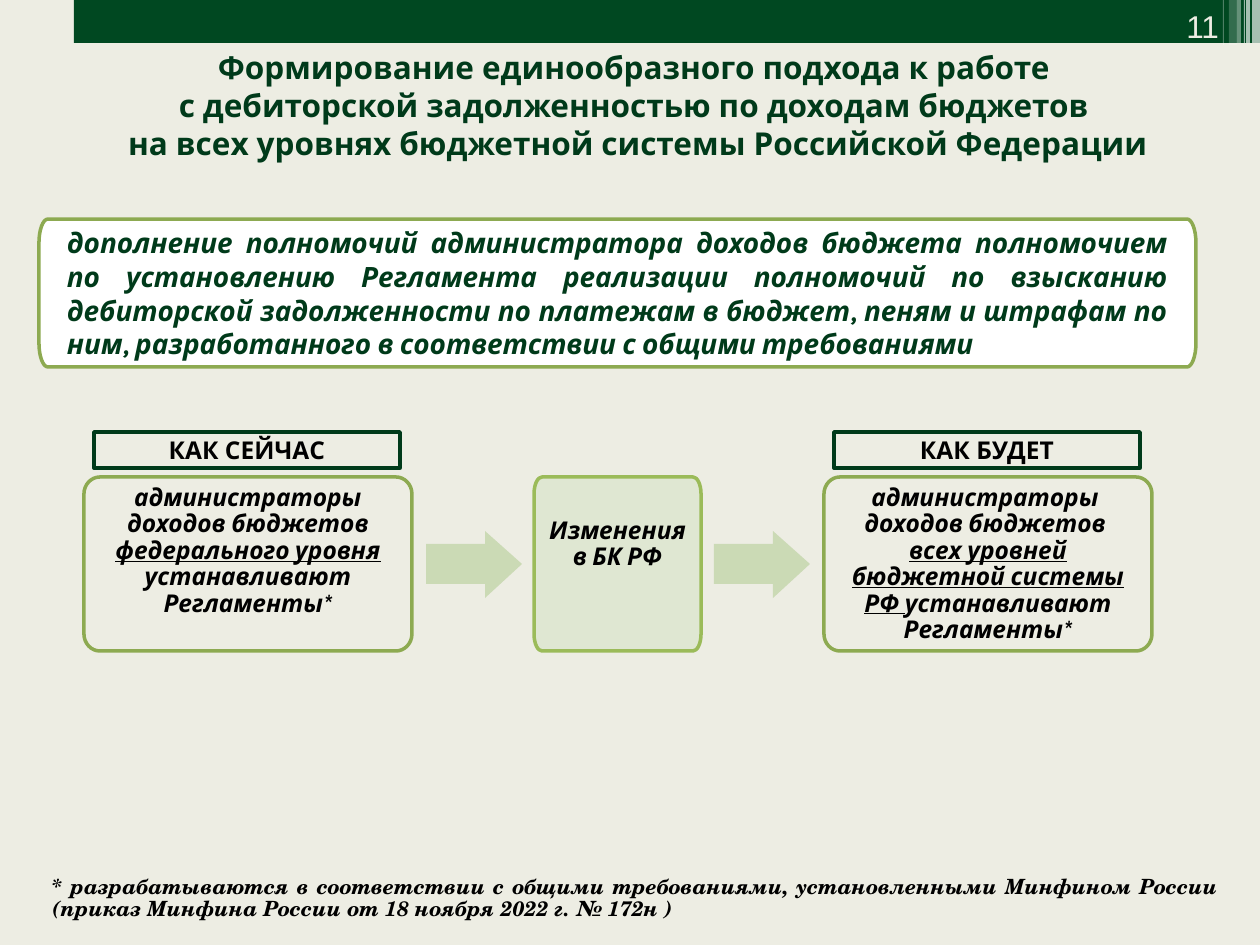
"""Build the slide on a uniform approach to budget receivables."""
from dataclasses import dataclass

from lxml.etree import SubElement
from pptx import Presentation
from pptx.dml.color import RGBColor
from pptx.enum.shapes import MSO_SHAPE as Shape
from pptx.enum.text import MSO_ANCHOR as Anchor, MSO_AUTO_SIZE as AutoSize, PP_ALIGN as Align
from pptx.oxml.ns import qn
from pptx.util import Emu, Pt

SCALE = 914400 / 126


@dataclass(frozen=True)
class Theme:
    paper: str = "EDEDE3"
    white: str = "FFFFFF"
    black: str = "000000"
    header: str = "004821"
    dark: str = "003A1A"
    olive: str = "8DAA51"
    lime: str = "9BBB59"
    mint: str = "DEE7D1"
    arrow: str = "CBDAB5"
    sans: str = "Karla"
    serif: str = "TeX Gyre Schola"
    number: str = "Arial"
    large: int = 18
    medium: int = 16
    body: int = 14
    note: int = 12


THEME = Theme()


def px(value):
    return Emu(round(value * SCALE))


def rgb(color):
    return RGBColor.from_string(color)


def style(shape, fill=None, line=None, opacity=100):
    shape.shadow.inherit = False
    if fill:
        shape.fill.solid()
        shape.fill.fore_color.rgb = rgb(fill)
        if opacity < 100:
            color = shape.fill._xPr.find(qn("a:solidFill"))[0]
            SubElement(color, qn("a:alpha"), val=str(opacity * 1000))
    else:
        shape.fill.background()
    if line:
        shape.line.color.rgb = rgb(line)
        shape.line.width = Pt(2)
    else:
        shape.line.fill.background()
    return shape


def add_rectangle(slide, box, **look):
    return style(slide.shapes.add_shape(Shape.RECTANGLE, *map(px, box)), **look)


def add_outline(slide, points, **look):
    start, *others = [(px(x), px(y)) for x, y in points]
    builder = slide.shapes.build_freeform(*start)
    builder.add_line_segments(others, close=True)
    return style(builder.convert_to_shape(), **look)


def round_corners(shape):
    """Turn every other segment of the outline into a quarter ellipse."""
    path = shape._element.find(".//" + qn("a:path"))
    segments = [segment for segment in path if len(segment)]
    ends = [(int(segment[0].get("x")), int(segment[0].get("y"))) for segment in segments]
    for index in range(1, len(ends), 2):
        first, last = ends[index - 1], ends[index]
        corner = (first[0], last[1]) if index % 4 == 1 else (last[0], first[1])
        segment = segments[index]
        curve = SubElement(path, qn("a:cubicBezTo"))
        for end in (first, last):
            x, y = (round(a + (c - a) * 0.55) for a, c in zip(end, corner))
            SubElement(curve, qn("a:pt"), x=str(x), y=str(y))
        curve.append(segment[0])
        path.replace(segment, curve)


def add_rounded_box(slide, box, radius, **look):
    left, top, width, height = box
    across, down = radius
    right, bottom = left + width, top + height
    points = [(left, top + down), (left + across, top), (right - across, top), (right, top + down),
              (right, bottom - down), (right - across, bottom), (left + across, bottom),
              (left, bottom - down)]
    shape = add_outline(slide, points, **look)
    round_corners(shape)
    return shape


def write(shape, parts, align=Align.CENTER, anchor=Anchor.MIDDLE, insets=None, spacing=1.0, **font):
    """Fill a shape with one paragraph of (text, underlined) parts."""
    frame = shape.text_frame
    frame_format = {"word_wrap": True, "auto_size": AutoSize.NONE, "vertical_anchor": anchor}
    sides = ("margin_left", "margin_top", "margin_right", "margin_bottom")
    frame_format.update(zip(sides, map(px, insets or (13, 6, 13, 6))))
    for name, value in frame_format.items():
        setattr(frame, name, value)
    paragraph = frame.paragraphs[0]
    for name, value in {"alignment": align, "line_spacing": spacing, "space_before": Pt(0)}.items():
        setattr(paragraph, name, value)
    font_format = {"name": THEME.sans, "size": THEME.body, "color": THEME.black,
                   "bold": True, "italic": False} | font
    color = font_format.pop("color")
    font_format["size"] = Pt(font_format["size"])
    for text, underlined in parts:
        for index, line in enumerate(text.split("\n")):
            if index:
                paragraph.add_line_break()
            if line:
                run = paragraph.add_run()
                run.text = line
                for name, value in (font_format | {"underline": underlined}).items():
                    setattr(run.font, name, value)
                run.font.color.rgb = rgb(color)


def add_text(slide, box, text, **text_format):
    write(slide.shapes.add_textbox(*map(px, box)), [(text, False)], **text_format)


def add_header(slide):
    add_rectangle(slide, (74, 0, 1186, 43), fill=THEME.header)
    stripes = [(1252, 8, 43, 65), (1246, 4, 43, 65), (1244, 1, 43, 60),
               (1237, 4, 43, 40), (1229, 8, 45, 20), (1223, 1, 45, 30)]
    for left, width, height, opacity in stripes:
        add_rectangle(slide, (left, 0, width, height), fill=THEME.white, opacity=opacity)
    add_text(slide, (1127, 0, 105, 51), "11", align=Align.RIGHT, anchor=Anchor.BOTTOM,
             name=THEME.number, size=THEME.large, color=THEME.paper, bold=False)


def add_title(slide, text):
    title = slide.shapes.title
    for name, value in zip(("left", "top", "width", "height"), (73, 42, 1130, 127)):
        setattr(title, name, px(value))
    write(title, [(text, False)], anchor=Anchor.TOP, size=THEME.large, color=THEME.dark)


def add_column(slide, left, label, parts):
    heading = add_rectangle(slide, (left + 10, 432, 306, 36), line=THEME.dark)
    write(heading, [(label, False)])
    box = add_rounded_box(slide, (left, 477, 328, 174), (16, 17), line=THEME.olive)
    write(box, parts, anchor=Anchor.TOP, insets=(8, 8, 8, 47), spacing=0.9, italic=True)


def add_arrow(slide, left):
    neck, tip = left + 59, left + 96
    add_outline(slide, [(left, 544), (neck, 544), (neck, 531), (tip, 564),
                        (neck, 598), (neck, 584), (left, 584)], fill=THEME.arrow)


def main():
    presentation = Presentation()
    presentation.slide_width, presentation.slide_height = px(1260), px(945)
    slide = presentation.slides.add_slide(presentation.slide_layouts[5])
    slide.background.fill.solid()
    slide.background.fill.fore_color.rgb = rgb(THEME.paper)
    add_header(slide)
    add_title(slide, "Формирование единообразного подхода к работе \n"
                     "с дебиторской задолженностью по доходам бюджетов \n"
                     "на всех уровнях бюджетной системы Российской Федерации")
    banner = add_rounded_box(slide, (39, 219, 1157, 148), (9, 24), fill=THEME.white, line=THEME.olive)
    write(banner, [("дополнение полномочий администратора доходов бюджета полномочием "
                    "по установлению Регламента реализации полномочий по взысканию "
                    "дебиторской задолженности по платежам в бюджет, пеням и штрафам по "
                    "ним, разработанного в соответствии с общими требованиями ", False)],
          align=Align.JUSTIFY, insets=(28, 1, 28, 1), size=THEME.medium, color=THEME.dark, italic=True)
    add_column(slide, 84, "КАК СЕЙЧАС", [
        ("администраторы доходов бюджетов ", False),
        ("федерального уровня ", True),
        ("устанавливают Регламенты*", False)])
    add_column(slide, 824, "КАК БУДЕТ", [
        ("администраторы \nдоходов бюджетов \n", False),
        ("всех уровней бюджетной системы РФ ", True),
        ("устанавливают Регламенты*", False)])
    change = add_rounded_box(slide, (534, 477, 167, 174), (8, 17),
                             fill=THEME.mint, line=THEME.lime, opacity=90)
    write(change, [("Изменения в БК РФ", False)], insets=(8, 8, 8, 47), spacing=0.9, italic=True)
    for left in (426, 714):
        add_arrow(slide, left)
    add_text(slide, (39, 870, 1193, 58),
             "* разрабатываются в соответствии с общими требованиями, установленными Минфином России "
             "(приказ Минфина России от 18 ноября 2022 г. № 172н )",
             align=Align.JUSTIFY, anchor=Anchor.TOP, spacing=0.9,
             name=THEME.serif, size=THEME.note, italic=True)
    presentation.save("out.pptx")


if __name__ == "__main__":
    main()
